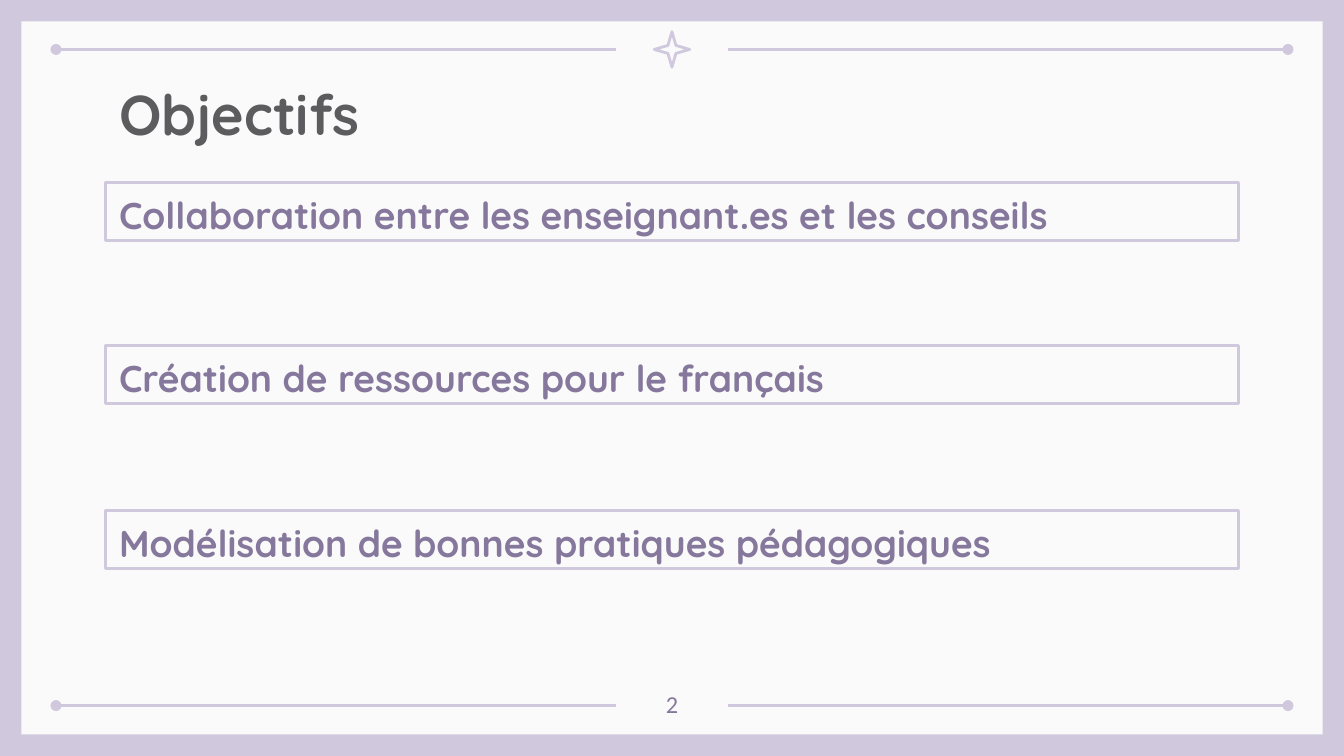
from typing import NamedTuple

import lxml.etree
import pptx
import pptx.dml.color
import pptx.enum.shapes
import pptx.enum.text
import pptx.oxml.ns
import pptx.util

Pt = pptx.util.Pt
SHAPE = pptx.enum.shapes.MSO_SHAPE
ANCHOR = pptx.enum.text.MSO_ANCHOR
ALIGN = pptx.enum.text.PP_ALIGN

COLORS = {"lilac": "D0C9DD", "panel": "FAFAFA", "title": "5C5C5F", "accent": "85789C"}
SLIDE_WIDTH, SLIDE_HEIGHT = 720, 405
MARGIN = 11.5
RULE_OUTER, RULE_INNER = 30, 330
RULE_TOPS = (26.5, 378)
STAR_SIZE = 19
LINE_WIDTH = 1.5
INSET = 7.2
CONTENT_LEFT, CONTENT_WIDTH = 56.7, 607


class Box(NamedTuple):
    left: float
    top: float
    width: float
    height: float


class TextStyle(NamedTuple):
    font: str
    size: float
    color: str
    bold: bool = False
    align: ALIGN = ALIGN.LEFT
    anchor: ANCHOR = ANCHOR.TOP
    line_spacing: float = 1.0


class Goal(NamedTuple):
    top: float
    text: str


TITLE_STYLE = TextStyle("Quicksand", 30, "title", bold=True)
GOAL_STYLE = TextStyle("Quicksand", 20, "accent", bold=True,
                       anchor=ANCHOR.MIDDLE, line_spacing=1.15)
NUMBER_STYLE = TextStyle("Calibri", 13, "accent", align=ALIGN.CENTER)

GOALS = (
    Goal(97.8, "Collaboration entre les enseignant.es et les conseils"),
    Goal(185.2, "Création de ressources pour le français"),
    Goal(273.6, "Modélisation de bonnes pratiques pédagogiques"),
)


def rgb(name: str) -> pptx.dml.color.RGBColor:
    return pptx.dml.color.RGBColor.from_string(COLORS[name])


def add_child(parent, tag: str, **attributes: str) -> None:
    lxml.etree.SubElement(parent, pptx.oxml.ns.qn(tag), **attributes)


def style_line(line) -> None:
    line.color.rgb = rgb("lilac")
    line.width = Pt(LINE_WIDTH)


def add_panel(slide, box: Box) -> None:
    panel = slide.shapes.add_shape(SHAPE.RECTANGLE, *map(Pt, box))
    panel.shadow.inherit = False
    panel.fill.solid()
    panel.fill.fore_color.rgb = rgb("panel")
    panel.line.fill.background()


def add_outline(slide, kind: SHAPE, box: Box):
    """Add an unfilled shape with a lilac, round-jointed border."""
    outline = slide.shapes.add_shape(kind, *map(Pt, box))
    outline.shadow.inherit = False
    outline.fill.background()
    style_line(outline.line)
    add_child(outline.line._get_or_add_ln(), "a:round")
    return outline


def add_rule(slide, outer: float, inner: float, top: float) -> None:
    """Add a horizontal rule with a dot at its outer end."""
    rule = slide.shapes.add_connector(
        pptx.enum.shapes.MSO_CONNECTOR.STRAIGHT, Pt(outer), Pt(top), Pt(inner), Pt(top))
    style_line(rule.line)
    add_child(rule.line._get_or_add_ln(), "a:headEnd", type="oval", w="med", len="med")
    add_child(rule._element.spPr, "a:effectLst")


def write_text(frame, text: str, style: TextStyle) -> None:
    frame.word_wrap = True
    frame.margin_left = frame.margin_right = Pt(INSET)
    frame.margin_top = frame.margin_bottom = Pt(INSET)
    frame.vertical_anchor = style.anchor
    paragraph = frame.paragraphs[0]
    paragraph.text = text
    paragraph.alignment = style.align
    paragraph.line_spacing = style.line_spacing
    paragraph.font.name = style.font
    paragraph.font.size = Pt(style.size)
    paragraph.font.bold = style.bold
    paragraph.font.color.rgb = rgb(style.color)


def add_label(slide, box: Box, text: str, style: TextStyle) -> None:
    label = slide.shapes.add_textbox(*map(Pt, box))
    write_text(label.text_frame, text, style)


def add_frame(slide) -> None:
    """Draw the panel, the four rules and the star."""
    add_panel(slide, Box(MARGIN, MARGIN, SLIDE_WIDTH - 2 * MARGIN, SLIDE_HEIGHT - 2 * MARGIN))
    for top in RULE_TOPS:
        add_rule(slide, RULE_OUTER, RULE_INNER, top)
        add_rule(slide, SLIDE_WIDTH - RULE_OUTER, SLIDE_WIDTH - RULE_INNER, top)
    star = add_outline(slide, SHAPE.STAR_4_POINT, Box(
        (SLIDE_WIDTH - STAR_SIZE) / 2, RULE_TOPS[0] - STAR_SIZE / 2, STAR_SIZE, STAR_SIZE))
    star.adjustments[0] = 0.16


def main() -> None:
    presentation = pptx.Presentation()
    presentation.slide_width = Pt(SLIDE_WIDTH)
    presentation.slide_height = Pt(SLIDE_HEIGHT)
    slide = presentation.slides.add_slide(presentation.slide_layouts[6])
    slide.background.fill.solid()
    slide.background.fill.fore_color.rgb = rgb("lilac")

    add_frame(slide)
    add_label(slide, Box(CONTENT_LEFT, 35.3, CONTENT_WIDTH, 45.4), "Objectifs", TITLE_STYLE)
    for goal in GOALS:
        goal_box = add_outline(slide, SHAPE.RECTANGLE,
                               Box(CONTENT_LEFT, goal.top, CONTENT_WIDTH, 31))
        write_text(goal_box.text_frame, goal.text, GOAL_STYLE)
    add_label(slide, Box(338.4, 362.2, 43.2, 26), "2", NUMBER_STYLE)

    presentation.save("out.pptx")


if __name__ == "__main__":
    main()
